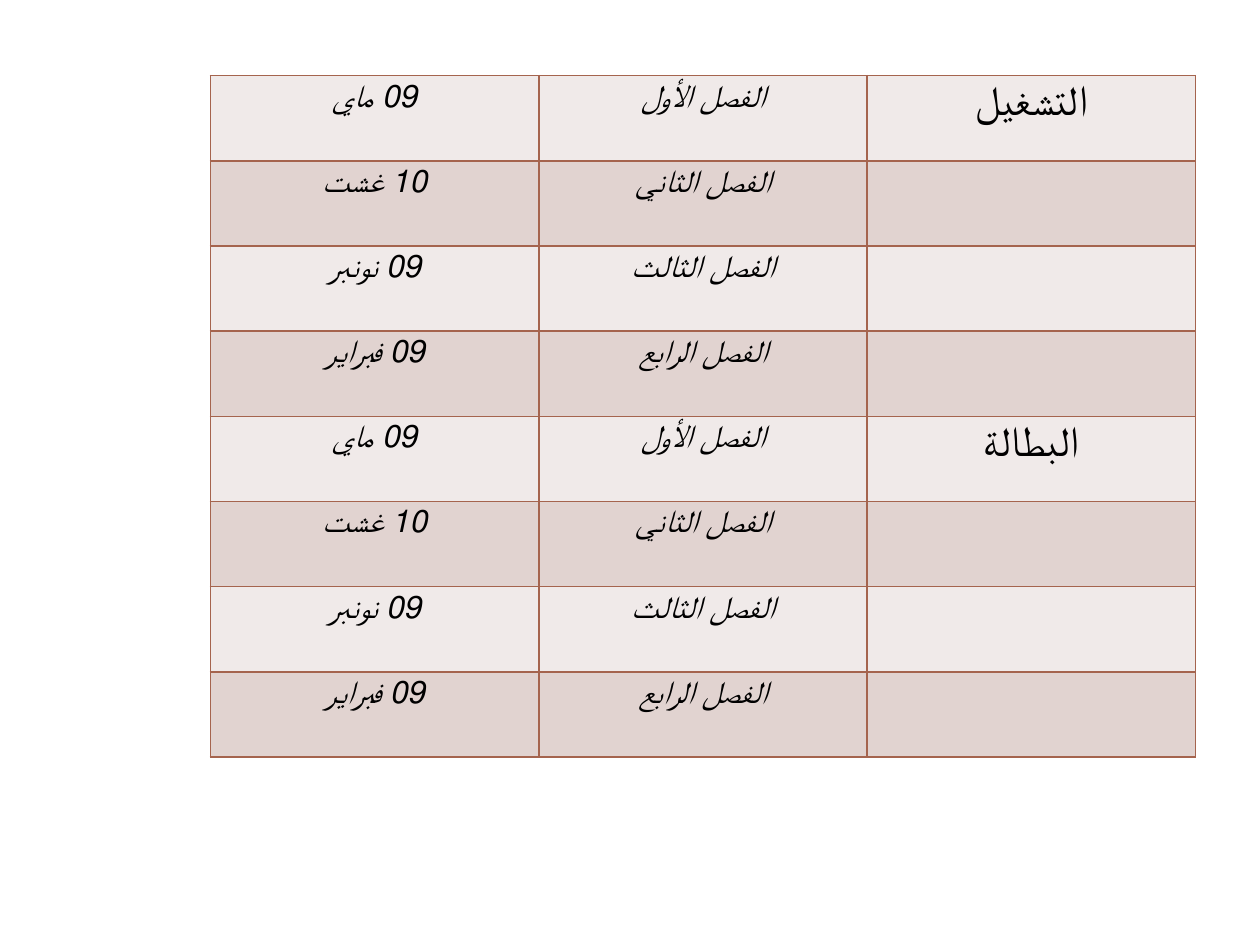
from lxml import etree
from pptx import Presentation
from pptx.dml.color import RGBColor
from pptx.enum.text import PP_ALIGN
from pptx.oxml import parse_xml
from pptx.oxml.ns import nsdecls
from pptx.util import Inches, Pt

BORDER = RGBColor(0xA5, 0x64, 0x4E)
BLACK = RGBColor(0, 0, 0)
BANDS = [RGBColor(0xF0, 0xEA, 0xE9), RGBColor(0xE1, 0xD3, 0xD0)]
FONT = "Cabin"

TOPICS = ["التشغيل", "البطالة"]
QUARTERS = [
    ("09 ماي", "الفصل الأول"),
    ("10 غشت", "الفصل الثاني"),
    ("09 نونبر", "الفصل الثالث"),
    ("09 فبراير", "الفصل الرابع"),
]


def add_borders(cell):
    tcPr = cell._tc.get_or_add_tcPr()
    for i, side in enumerate("LRTB"):
        tcPr.insert(i, parse_xml(
            f'<a:ln{side} {nsdecls("a")} w="{Pt(1)}"><a:solidFill>'
            f'<a:srgbClr val="{BORDER}"/></a:solidFill></a:ln{side}>'))


def write(cell, text, size, italic, rtl):
    p = cell.text_frame.paragraphs[0]
    p.alignment = PP_ALIGN.CENTER
    if rtl:
        p._p.get_or_add_pPr().set("rtl", "1")
    r = p.add_run()
    r.text = text
    r.font.name = FONT
    r.font.size = Pt(size)
    r.font.italic = italic
    r.font.bold = False
    r.font.color.rgb = BLACK


prs = Presentation()
prs.slide_width, prs.slide_height = Inches(10), Inches(7.5)
s = prs.slides.add_slide(prs.slide_layouts[6])

# Publication calendar: four quarters for each topic
rows = len(TOPICS) * len(QUARTERS)
table = s.shapes.add_table(rows, 3, Inches(1.67), Inches(0.6),
                           Inches(7.82), Inches(5.41)).table
table.first_row = False
table.horz_banding = False

# Banded fills and borders
for i, row in enumerate(table.rows):
    for cell in row.cells:
        cell.fill.solid()
        cell.fill.fore_color.rgb = BANDS[i % 2]
        add_borders(cell)

# Dates, quarters and topic names
for t, topic in enumerate(TOPICS):
    first = t * len(QUARTERS)
    write(table.cell(first, 2), topic, 24, False, rtl=(t == 0))
    for q, texts in enumerate(QUARTERS):
        for col, text in enumerate(texts):
            write(table.cell(first + q, col), text, 18, True, rtl=True)

prs.save("out.pptx")
